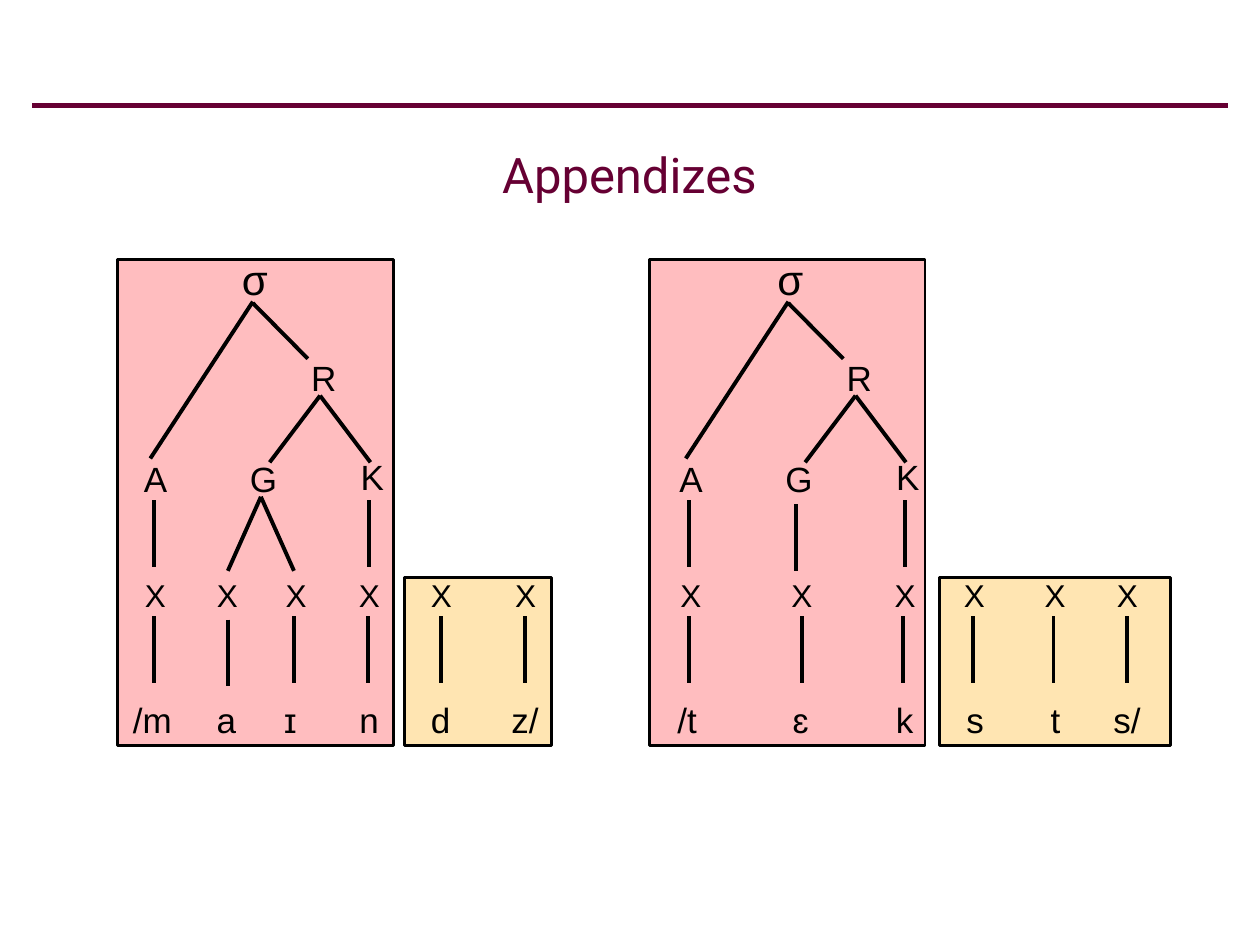
from dataclasses import dataclass
from lxml.etree import SubElement as Sub
from pptx import Presentation as Deck
from pptx.dml.color import RGBColor as RGB
from pptx.enum.shapes import MSO_CONNECTOR as Link, MSO_SHAPE as Kind
from pptx.enum.text import MSO_ANCHOR as Anchor, MSO_AUTO_SIZE as Fit, PP_ALIGN as Align
from pptx.oxml.ns import qn
from pptx.util import Pt


@dataclass(frozen=True)
class Theme:
    ink: str = "000000"
    plum: str = "660033"
    pink: str = "FF7C80"
    tan: str = "FFCC66"
    face: str = "Arial"
    head: str = "Roboto"
    title: int = 28
    root: int = 24
    node: int = 20
    slot: int = 18


def apply(obj, vals):
    for key, val in vals.items():
        setattr(obj, key, val)


class Board:
    def __init__(self, slide, theme):
        self.slide, self.theme = slide, theme

    def style(self, frame, para, look):
        apply(frame, look["frame"])
        apply(para, look["para"])
        apply(para.font, look["font"])
        para.font.color.rgb = RGB.from_string(look["color"])

    def title(self, text, left, top, width, height):
        shape = self.slide.shapes.title
        apply(shape, dict(left=Pt(left), top=Pt(top), width=Pt(width), height=Pt(height)))
        frame = shape.text_frame
        frame.text = text
        self.style(frame, frame.paragraphs[0], dict(
            frame=dict(vertical_anchor=Anchor.MIDDLE, auto_size=Fit.NONE, word_wrap=True),
            para=dict(alignment=Align.CENTER),
            font=dict(name=self.theme.head, size=Pt(self.theme.title)),
            color=self.theme.plum))

    def panel(self, left, top, width, height, color):
        shape = self.slide.shapes.add_shape(Kind.RECTANGLE, Pt(left), Pt(top), Pt(width), Pt(height))
        shape.shadow.inherit = False
        shape.fill.solid()
        shape.fill.fore_color.rgb = RGB.from_string(color)
        tint = shape.fill._xPr.find(qn("a:solidFill"))[0]
        Sub(tint, qn("a:alpha"), val="50000")
        shape.line.color.rgb = RGB.from_string(self.theme.ink)
        shape.line.width = Pt(1.5)

    def line(self, start, end, color=None, width=2.25):
        link = self.slide.shapes.add_connector(Link.STRAIGHT, *map(Pt, start + end))
        link.line.color.rgb = RGB.from_string(color or self.theme.ink)
        link.line.width = Pt(width)
        Sub(link._element.spPr, qn("a:effectLst"))

    def label(self, text, mid, top, width, size):
        box = self.slide.shapes.add_textbox(
            Pt(mid - width / 2), Pt(top), Pt(width), Pt(size * 1.08 + 7.2))
        frame = box.text_frame
        frame.text = text
        self.style(frame, frame.paragraphs[0], dict(
            frame=dict(margin_left=0, margin_right=0, margin_top=Pt(3.6),
                       margin_bottom=Pt(3.6), word_wrap=False, auto_size=Fit.SHAPE_TO_FIT_TEXT),
            para=dict(alignment=Align.CENTER, line_spacing=0.9),
            font=dict(name=self.theme.face, size=Pt(size)),
            color=self.theme.ink))

    def tree(self, dx):
        t = self.theme
        for text, mid, top, width, size in [
                ("σ", 145.4, 144.7, 14.4, t.root), ("R", 185, 203, 14.4, t.node),
                ("A", 88.9, 260.6, 13.7, t.node), ("G", 150.5, 260.6, 15.8, t.node),
                ("K", 212.8, 259.2, 13.7, t.node)]:
            self.label(text, mid + dx, top, width, size)
        for x, y, tox, toy in [
                (144.5, 172.4, 85.9, 262), (144.5, 173.2, 175.9, 205),
                (182.9, 226.1, 154.1, 264.2), (182.9, 226.1, 211.7, 264.2),
                (87.8, 285.8, 87.8, 324), (211, 285.8, 211, 324)]:
            self.line((x + dx, y), (tox + dx, toy))

    def column(self, text, slot, stem, mid, width, drop=0):
        self.label("X", slot, 328.3, 12.2, self.theme.slot)
        self.line((stem, 352.1 + drop), (stem, 390.1 + drop))
        self.label(text, mid, 398.2, width, self.theme.node)


def main():
    deck = Deck()
    apply(deck, dict(slide_width=Pt(720), slide_height=Pt(540)))
    theme = Theme()
    board = Board(deck.slides.add_slide(deck.slide_layouts[5]), theme)
    board.line((18.5, 60.3), (701.5, 60.3), theme.plum, 3)
    for left, width in [(537, 132), (231.1, 84)]:
        board.panel(left, 329.9, width, 96, theme.tan)
    for left in (371, 67.1):
        board.panel(left, 148.2, 157.7, 277.7, theme.pink)
    board.title("Appendizes", 19.4, 60.5, 680.5, 77.8)
    for dx in (0, 306):
        board.tree(dx)
    for foot in (130.2, 168):
        board.line((149.1, 283.9), (foot, 326.2))
    board.line((455, 288), (455, 326.2))
    for row in [
            ("/m", 88.9, 87.8, 87.1, 25.9), ("a", 130, 130.2, 129.2, 10.8, 2),
            ("ɪ", 169.2, 168.1, 165.2, 5.8), ("n", 211.1, 210.2, 211, 11.5),
            ("d", 252.2, 252, 251.8, 11.5), ("z/", 300.4, 300.2, 300, 17.3),
            ("/t", 394.9, 393.9, 392.6, 15.1), ("ɛ", 458.3, 458.1, 457.2, 8.6),
            ("k", 517.3, 516.2, 517, 10.1), ("s", 556.9, 556, 557.2, 10.1),
            ("t", 603, 602, 603.2, 7.2), ("s/", 644.2, 644.2, 644, 18)]:
        board.column(*row)
    deck.save("out.pptx")


if __name__ == "__main__":
    main()
